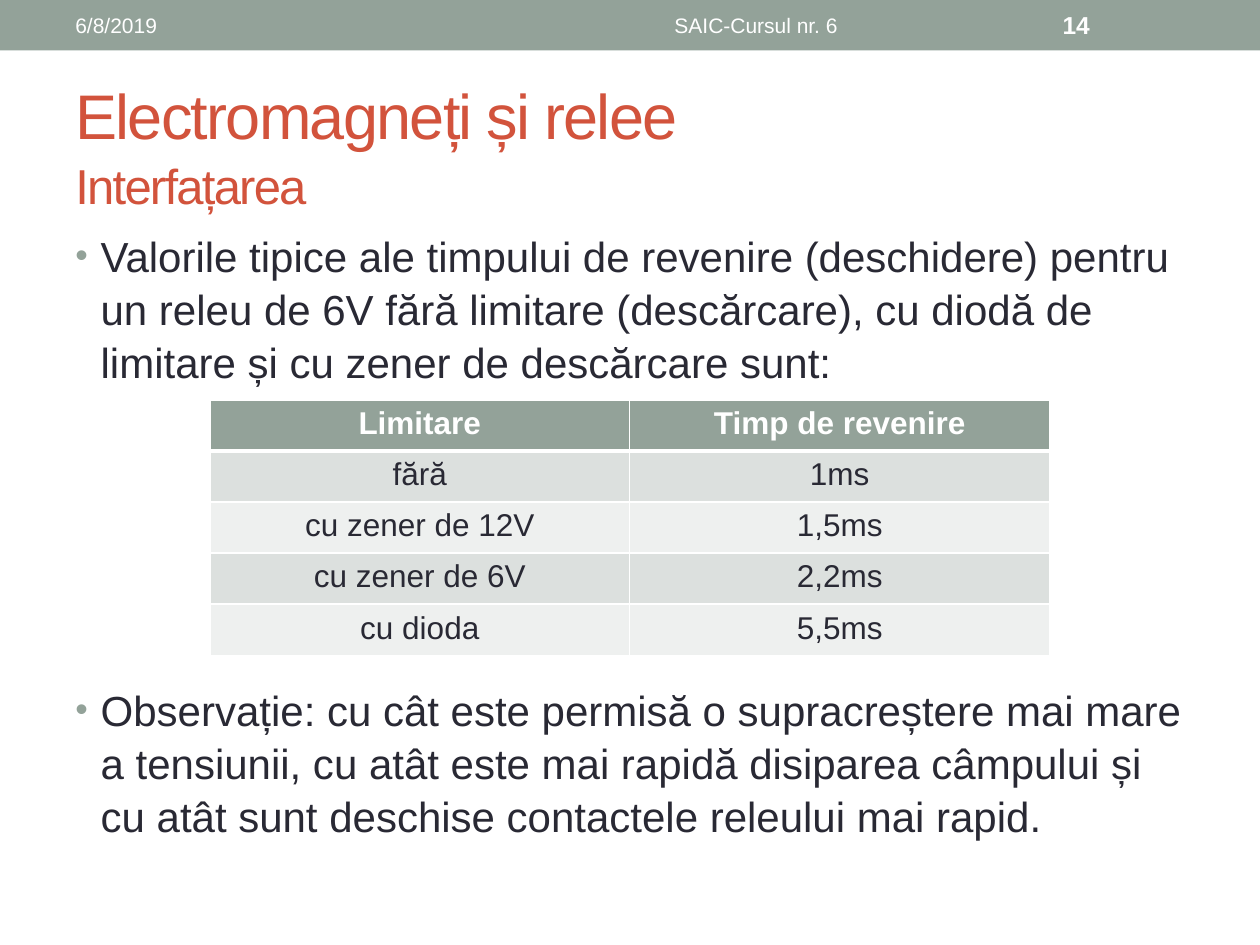
from lxml import etree
from pptx import Presentation
from pptx.dml.color import RGBColor
from pptx.enum import shapes, text
from pptx.oxml import ns
from pptx.util import Cm, Pt

COLORS = {
    "sage": "93A299",
    "rust": "D2533C",
    "ink": "292934",
    "white": "FFFFFF",
    "band_dark": "DCE0DE",
    "band_light": "EEF0EF",
}
FONT = "Arial"
ROWS = [
    ("Limitare", "Timp de revenire"),
    ("fără", "1ms"),
    ("cu zener de 12V", "1,5ms"),
    ("cu zener de 6V", "2,2ms"),
    ("cu dioda", "5,5ms"),
]


def color(name):
    return RGBColor.from_string(COLORS[name])


def add_xml(parent, tag, **attributes):
    return etree.SubElement(parent, ns.qn(tag), attributes)


def write(para, words, size=24, ink="ink", bold=False, align=text.PP_ALIGN.LEFT,
          line_spacing=None, tracking=None):
    para.alignment = align
    if line_spacing:
        para.line_spacing = line_spacing
    span = para.add_run()
    span.text = words
    span.font.name = FONT
    span.font.size = Pt(size)
    span.font.bold = bold
    span.font.color.rgb = color(ink)
    if tracking:
        span.font._element.set("spc", str(tracking))


class SlideBuilder:
    def __init__(self, deck):
        self.page = deck.slides.add_slide(deck.slide_layouts[6])

    def band(self, left, top, width, height, fill):
        box = self.page.shapes.add_shape(
            shapes.MSO_SHAPE.RECTANGLE, Cm(left), Cm(top), Cm(width), Cm(height))
        box.shadow.inherit = False
        box.fill.solid()
        box.fill.fore_color.rgb = color(fill)
        box.line.fill.background()

    def frame(self, left, top, width, height, anchor=text.MSO_ANCHOR.MIDDLE):
        box = self.page.shapes.add_textbox(Cm(left), Cm(top), Cm(width), Cm(height))
        box.text_frame.word_wrap = True
        box.text_frame.vertical_anchor = anchor
        return box.text_frame

    def label(self, left, width, words, **style):
        frame = self.frame(left, 0.05, width, 0.91)
        write(frame.paragraphs[0], words, ink="white", **style)

    def title(self, heading, subheading):
        frame = self.frame(1.27, 1.52, 22.86, 2.74)
        style = {"ink": "rust", "tracking": -100, "line_spacing": 1.05}
        write(frame.paragraphs[0], heading, size=36, **style)
        write(frame.add_paragraph(), subheading, size=28, **style)

    def bullet(self, top, words):
        frame = self.frame(1.27, top, 22.86, 4.1, text.MSO_ANCHOR.TOP)
        para = frame.paragraphs[0]
        write(para, words, line_spacing=1.05)
        properties = para._p.get_or_add_pPr()
        properties.set("marL", str(Cm(0.51)))
        properties.set("indent", str(Cm(-0.51)))
        add_xml(add_xml(properties, "a:buClr"), "a:srgbClr", val=COLORS["sage"])
        add_xml(properties, "a:buSzPct", val="85000")
        add_xml(properties, "a:buFont", typeface=FONT)
        add_xml(properties, "a:buChar", char="•")

    def borders(self, cell, bottom):
        properties = cell._tc.get_or_add_tcPr()
        widths = {"a:lnL": 1, "a:lnR": 1, "a:lnT": 1, "a:lnB": bottom}
        for position, (tag, width) in enumerate(widths.items()):
            line = etree.Element(ns.qn(tag), w=str(Pt(width)))
            add_xml(add_xml(line, "a:solidFill"), "a:srgbClr", val=COLORS["white"])
            properties.insert(position, line)

    def table(self, left, top, width, height, rows):
        table = self.page.shapes.add_table(
            len(rows), len(rows[0]), Cm(left), Cm(top), Cm(width), Cm(height)).table
        for row, values in enumerate(rows):
            header = row == 0
            fill = "sage" if header else ("band_light", "band_dark")[row % 2]
            for column, words in enumerate(values):
                cell = table.cell(row, column)
                cell.fill.solid()
                cell.fill.fore_color.rgb = color(fill)
                write(cell.text_frame.paragraphs[0], words, size=18, bold=header,
                      ink="white" if header else "ink", align=text.PP_ALIGN.CENTER)
                self.borders(cell, bottom=3 if header else 1)


def main():
    deck = Presentation()
    deck.slide_width, deck.slide_height = Cm(25.4), Cm(19.05)
    slide = SlideBuilder(deck)
    slide.band(0, 0, 25.4, 1.02, "sage")
    slide.title("Electromagneți și relee", "Interfațarea")
    slide.bullet(4.47, "Valorile tipice ale timpului de revenire (deschidere) pentru "
                 "un releu de 6V fără limitare (descărcare), cu diodă de limitare "
                 "și cu zener de descărcare sunt:")
    slide.bullet(13.62, "Observație: cu cât este permisă o supracreștere mai mare a "
                 "tensiunii, cu atât este mai rapidă disiparea câmpului și cu atât "
                 "sunt deschise contactele releului mai rapid.")
    slide.label(1.27, 8.05, "6/8/2019", size=12)
    slide.label(9.53, 11.43, "SAIC-Cursul nr. 6", size=12, align=text.PP_ALIGN.CENTER)
    slide.label(21.17, 2.96, "14", size=14, bold=True)
    slide.table(4.23, 8.06, 16.93, 5.15, ROWS)
    deck.save("out.pptx")


if __name__ == "__main__":
    main()
